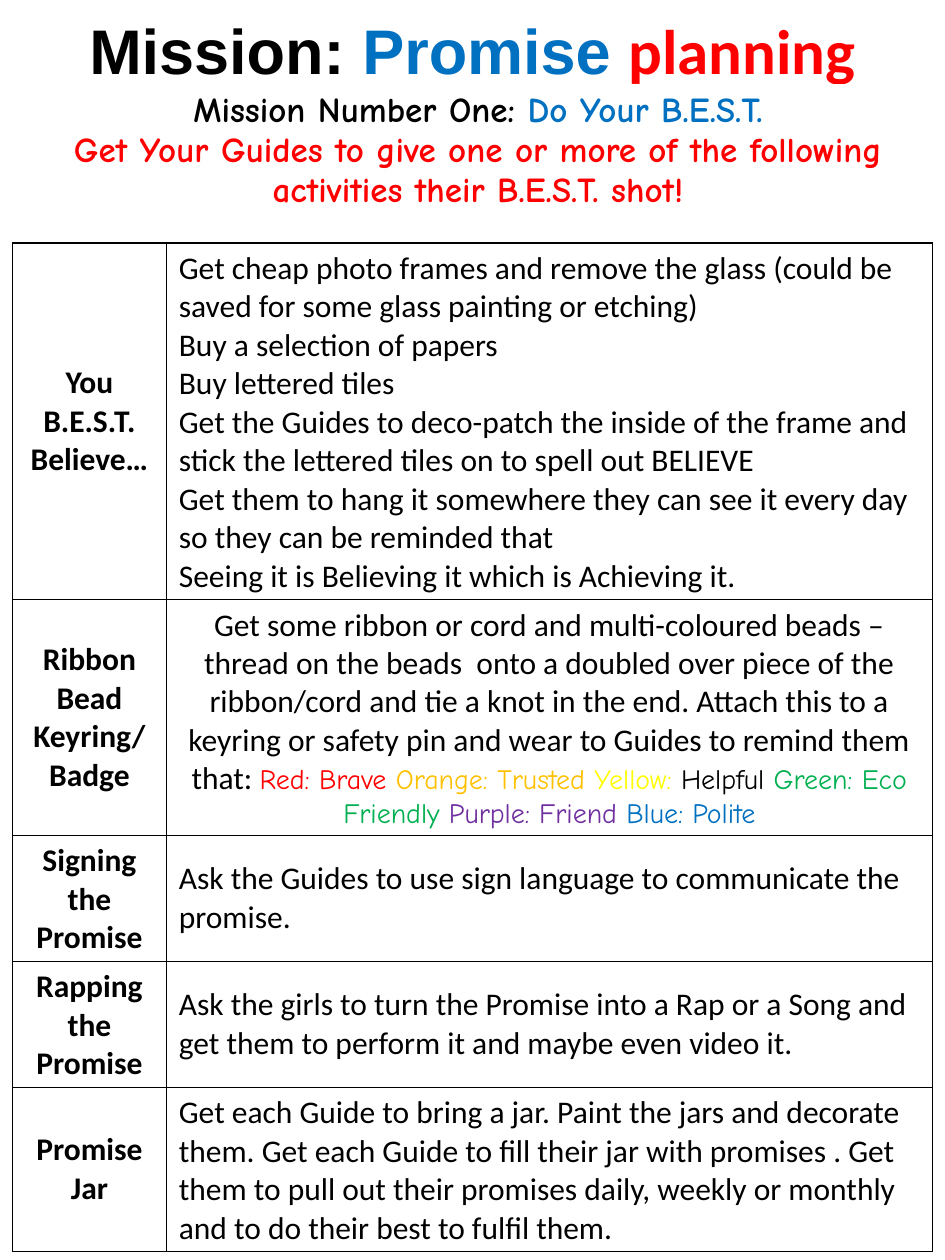
from lxml.etree import SubElement
from pptx import Presentation
from pptx.dml.color import RGBColor as Rgb
from pptx.enum.text import MSO_ANCHOR as Anchor, MSO_AUTO_SIZE as Auto, PP_ALIGN as Align
from pptx.oxml.ns import qn
from pptx.util import Inches, Pt

# Theme: colours, fonts, type sizes, line width
THEME = {
    "black": "000000", "red": "FF0000", "blue": "0070C0", "gold": "FFC000",
    "yellow": "FFFF00", "green": "00B050", "purple": "7030A0",
    "title": ("Arial", 36, True), "accent": ("Calibri", 36, True),
    "lead": ("Comic Neue", 20, True), "bead": ("Comic Neue", 16, False),
    "label": ("Calibri", 18, True), "body": ("Calibri", 18, False),
    "line": 1,
}

# Content: a paragraph is a list of (text, style, colour) runs
TITLE = [[("Mission: ", "title", "black"), ("Promise ", "title", "blue"),
          ("planning", "accent", "red")]]
LEAD = [
    [("Mission Number One: ", "lead", "black"), ("Do Your B.E.S.T.", "lead", "blue")],
    [("Get Your Guides to give one or more of the following activities "
      "their B.E.S.T. shot!", "lead", "red")],
]
BEADS = [("Red: Brave ", "red"), ("Orange: Trusted ", "gold"), ("Yellow: ", "yellow"),
         ("Helpful ", "black"), ("Green: Eco Friendly ", "green"),
         ("Purple: Friend ", "purple"), ("Blue: Polite", "blue")]


def plain(*lines, style="body"):
    return [[(line, style, "black")] for line in lines]


RIBBON = plain(
    "Get some ribbon or cord and multi-coloured beads – thread on the beads  onto a "
    "doubled over piece of the ribbon/cord and tie a knot in the end. Attach this to a "
    "keyring or safety pin and wear to Guides to remind them that: ")
RIBBON[0] += [(text, "bead", hue) for text, hue in BEADS]

# Tasks: label, row height, body alignment, body
TASKS = [
    ("You B.E.S.T. Believe…", 2.83, Align.LEFT, plain(
        "Get cheap photo frames and remove the glass (could be saved for some glass "
        "painting or etching)",
        "Buy a selection of papers",
        "Buy lettered tiles",
        "Get the Guides to deco-patch the inside of the frame and stick the lettered "
        "tiles on to spell out BELIEVE",
        "Get them to hang it somewhere they can see it every day so they can be "
        "reminded that",
        "Seeing it is Believing it which is Achieving it.")),
    ("Ribbon Bead Keyring/Badge", 1.87, Align.CENTER, RIBBON),
    ("Signing the Promise", 1, Align.LEFT, plain(
        "Ask the Guides to use sign language to communicate the promise.")),
    ("Rapping the Promise", 1, Align.LEFT, plain(
        "Ask the girls to turn the Promise into a Rap or a Song and get them to perform "
        "it and maybe even video it.")),
    ("Promise Jar", 1.3, Align.LEFT, plain(
        "Get each Guide to bring a jar. Paint the jars and decorate them. Get each Guide "
        "to fill their jar with promises . Get them to pull out their promises daily, "
        "weekly or monthly and to do their best to fulfil them.")),
]

# Grid, in inches
WIDE, HIGH = 7.5, 10
COLS = (1.22, 6.08)


def write(frame, paras, align):
    for i, runs in enumerate(paras):
        para = frame.paragraphs[0] if i == 0 else frame.add_paragraph()
        para.alignment = align
        for text, style, hue in runs:
            run = para.add_run()
            run.text = text
            font = run.font
            font.name, size, font.bold = THEME[style]
            font.size = Pt(size)
            font.color.rgb = Rgb.from_string(THEME[hue])


def frame_cell(cell):
    props = cell._tc.get_or_add_tcPr()
    for i, side in enumerate(("a:lnL", "a:lnR", "a:lnT", "a:lnB")):
        line = props.makeelement(qn(side), {"w": str(Pt(THEME["line"]))})
        props.insert(i, line)
        fill = SubElement(line, qn("a:solidFill"))
        SubElement(fill, qn("a:srgbClr"), val=THEME["black"])


def make_table(slide, left, top, cols, rows):
    box = [Inches(n) for n in (left, top, sum(cols), sum(rows))]
    table = slide.shapes.add_table(len(rows), len(cols), *box).table
    table.first_row = table.horz_banding = False
    for col, width in zip(table.columns, cols):
        col.width = Inches(width)
    for row, height in zip(table.rows, rows):
        row.height = Inches(height)
    for cell in table.iter_cells():
        cell.fill.background()
    return table


def main():
    deck = Presentation()
    deck.slide_width, deck.slide_height = Inches(WIDE), Inches(HIGH)
    slide = deck.slides.add_slide(deck.slide_layouts[6])

    # Title across the slide
    frame = slide.shapes.add_textbox(0, Inches(0.04), Inches(WIDE), Inches(0.71)).text_frame
    frame.word_wrap = True
    frame.auto_size = Auto.SHAPE_TO_FIT_TEXT
    write(frame, TITLE, Align.CENTER)

    # Lead text in a table of one cell
    lead = make_table(slide, 0.21, 0.67, [7.17], [1.1])
    write(lead.cell(0, 0).text_frame, LEAD, Align.CENTER)

    # Task table
    tasks = make_table(slide, 0.1, 1.93, COLS, [task[1] for task in TASKS])
    for i, (label, _, align, body) in enumerate(TASKS):
        write(tasks.cell(i, 0).text_frame, plain(label, style="label"), Align.CENTER)
        write(tasks.cell(i, 1).text_frame, body, align)
    for cell in tasks.iter_cells():
        cell.vertical_anchor = Anchor.MIDDLE
        frame_cell(cell)

    deck.save("out.pptx")


if __name__ == "__main__":
    main()
